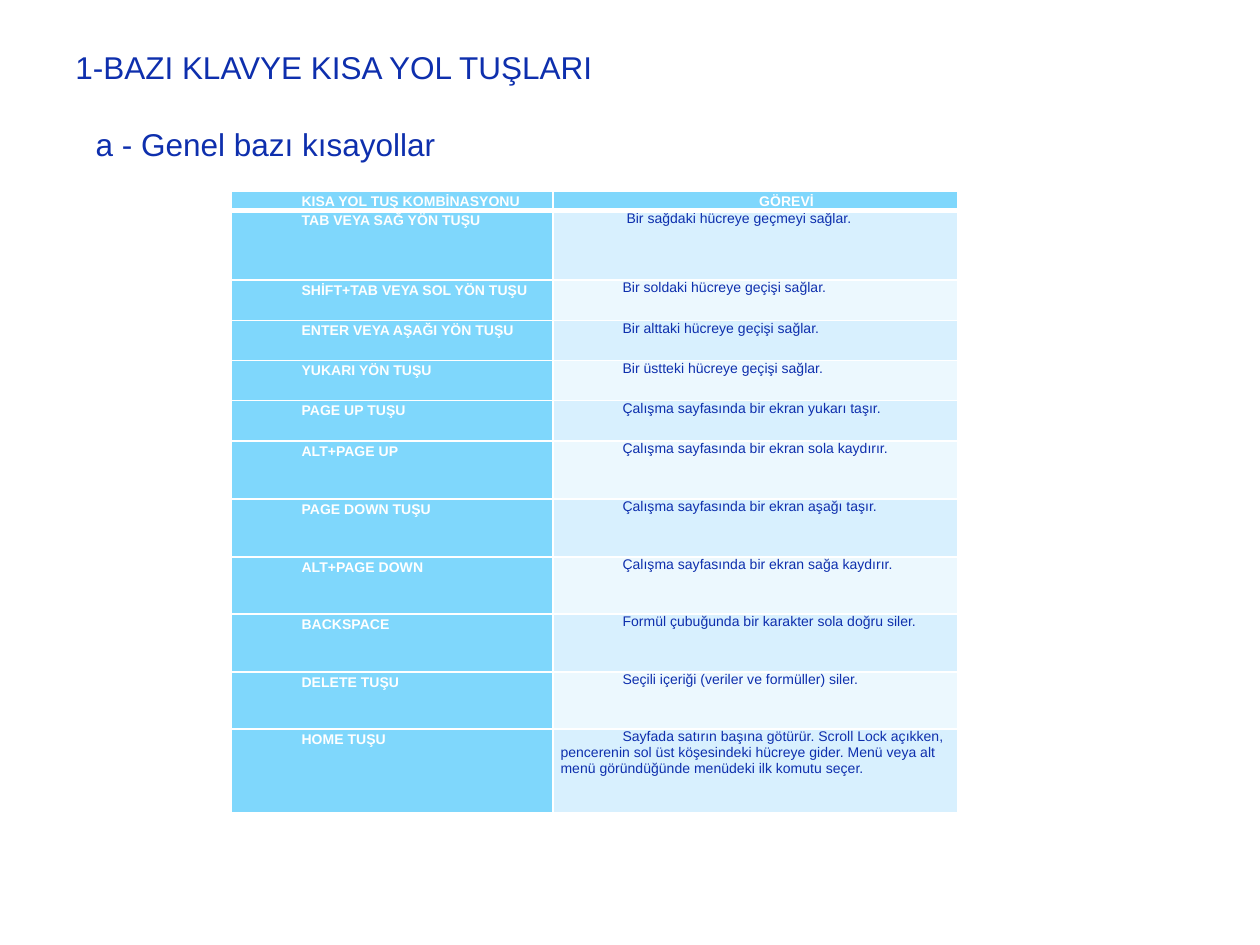
from lxml import etree
from pptx import Presentation
from pptx import util as u
from pptx.dml.color import RGBColor
from pptx.enum import text
from pptx.oxml.ns import qn

NAVY = RGBColor(0x0E, 0x2F, 0xAD)
WHITE = RGBColor(0xFF, 0xFF, 0xFF)
SKY = RGBColor(0x7F, 0xD7, 0xFC)
BANDS = (RGBColor(0xD8, 0xF0, 0xFE), RGBColor(0xEC, 0xF8, 0xFE))

HEADINGS = ("KISA YOL TUŞ KOMBİNASYONU", "GÖREVİ")
HEADING_HEIGHT = 0.38
COLUMN_WIDTHS = (6.48, 8.15)
INDENT = 1.26
SHORTCUTS = (
    ("TAB VEYA SAĞ YÖN TUŞU", "Bir sağdaki hücreye geçmeyi sağlar.", 1.4),
    ("SHİFT+TAB VEYA SOL YÖN TUŞU", "Bir soldaki hücreye geçişi sağlar.", 0.81),
    ("ENTER VEYA AŞAĞI YÖN TUŞU", "Bir alttaki hücreye geçişi sağlar.", 0.81),
    ("YUKARI YÖN TUŞU", "Bir üstteki hücreye geçişi sağlar.", 0.81),
    ("PAGE UP TUŞU", "Çalışma sayfasında bir ekran yukarı taşır.", 0.81),
    ("ALT+PAGE UP", "Çalışma sayfasında bir ekran sola kaydırır.", 1.17),
    ("PAGE DOWN TUŞU", "Çalışma sayfasında bir ekran aşağı taşır.", 1.17),
    ("ALT+PAGE DOWN", "Çalışma sayfasında bir ekran sağa kaydırır.", 1.15),
    ("BACKSPACE", "Formül çubuğunda bir karakter sola doğru siler.", 1.17),
    ("DELETE TUŞU", "Seçili içeriği (veriler ve formüller) siler.", 1.15),
    ("HOME TUŞU",
     "Sayfada satırın başına götürür. Scroll Lock açıkken, pencerenin sol üst "
     "köşesindeki hücreye gider. Menü veya alt menü göründüğünde menüdeki ilk "
     "komutu seçer.", 1.68),
)


def add_run(paragraph, words, size, color, bold=False):
    run = paragraph.add_run()
    run.text = words
    run.font.name = "Arial"
    run.font.size = u.Pt(size)
    run.font.bold = bold
    run.font.color.rgb = color


def add_title(slide, words, left, top, width):
    box = slide.shapes.add_textbox(u.Cm(left), u.Cm(top), u.Cm(width), u.Cm(1.02))
    frame = box.text_frame
    frame.word_wrap = False
    frame.auto_size = text.MSO_AUTO_SIZE.SHAPE_TO_FIT_TEXT
    add_run(frame.paragraphs[0], words, 18, NAVY)


def set_borders(cell, bottom, top):
    properties = cell._tc.get_or_add_tcPr()
    for side, points in (("lnL", 1), ("lnR", 1), ("lnT", top), ("lnB", bottom)):
        line = etree.SubElement(properties, qn(f"a:{side}"), w=str(u.Pt(points)))
        fill = etree.SubElement(line, qn("a:solidFill"))
        etree.SubElement(fill, qn("a:srgbClr"), val=str(WHITE))


def style_cell(cell, fill, bottom=1, top=1):
    set_borders(cell, bottom, top)
    cell.fill.solid()
    cell.fill.fore_color.rgb = fill
    cell.margin_left = cell.margin_right = u.Cm(0.15)
    cell.margin_top = cell.margin_bottom = 0


def indent(paragraph, margin, first_line):
    properties = paragraph._p.get_or_add_pPr()
    properties.set("marL", str(u.Cm(margin)))
    properties.set("indent", str(u.Cm(first_line)))


def fill_label(cell, words, bottom=1, top=1):
    style_cell(cell, SKY, bottom, top)
    paragraph = cell.text_frame.paragraphs[0]
    indent(paragraph, INDENT, 0)
    paragraph.line_spacing = 1.15
    add_run(paragraph, words, 8, WHITE, bold=True)
    return paragraph


def fill_task(cell, words, fill, first_line, top):
    style_cell(cell, fill, top=top)
    paragraph = cell.text_frame.paragraphs[0]
    indent(paragraph, 0, first_line)
    add_run(paragraph, words, 8, NAVY)


def add_shortcut_table(slide):
    heights = [HEADING_HEIGHT] + [height for _, _, height in SHORTCUTS]
    table = slide.shapes.add_table(
        len(heights), len(COLUMN_WIDTHS), u.Cm(4.67), u.Cm(3.86),
        u.Cm(sum(COLUMN_WIDTHS)), u.Cm(sum(heights))).table
    for column, width in zip(table.columns, COLUMN_WIDTHS):
        column.width = u.Cm(width)
    for row, height in zip(table.rows, heights):
        row.height = u.Cm(height)

    for index, words in enumerate(HEADINGS):
        heading = fill_label(table.cell(0, index), words, bottom=3)
    heading.alignment = text.PP_ALIGN.CENTER

    for index, (keys, task, _) in enumerate(SHORTCUTS):
        top = 3 if index == 0 else 1
        first_line = 1.33 if index == 0 else 1.25
        fill_label(table.cell(index + 1, 0), keys, top=top)
        fill_task(table.cell(index + 1, 1), task, BANDS[index % 2], first_line, top)


def main():
    presentation = Presentation()
    presentation.slide_width = u.Cm(25.4)
    presentation.slide_height = u.Cm(19.05)
    slide = presentation.slides.add_slide(presentation.slide_layouts[6])
    add_title(slide, "1-BAZI KLAVYE KISA YOL TUŞLARI", 1.27, 0.84, 11.43)
    add_title(slide, "a - Genel bazı kısayollar", 1.68, 2.39, 7.42)
    add_shortcut_table(slide)
    presentation.save("out.pptx")


if __name__ == "__main__":
    main()
